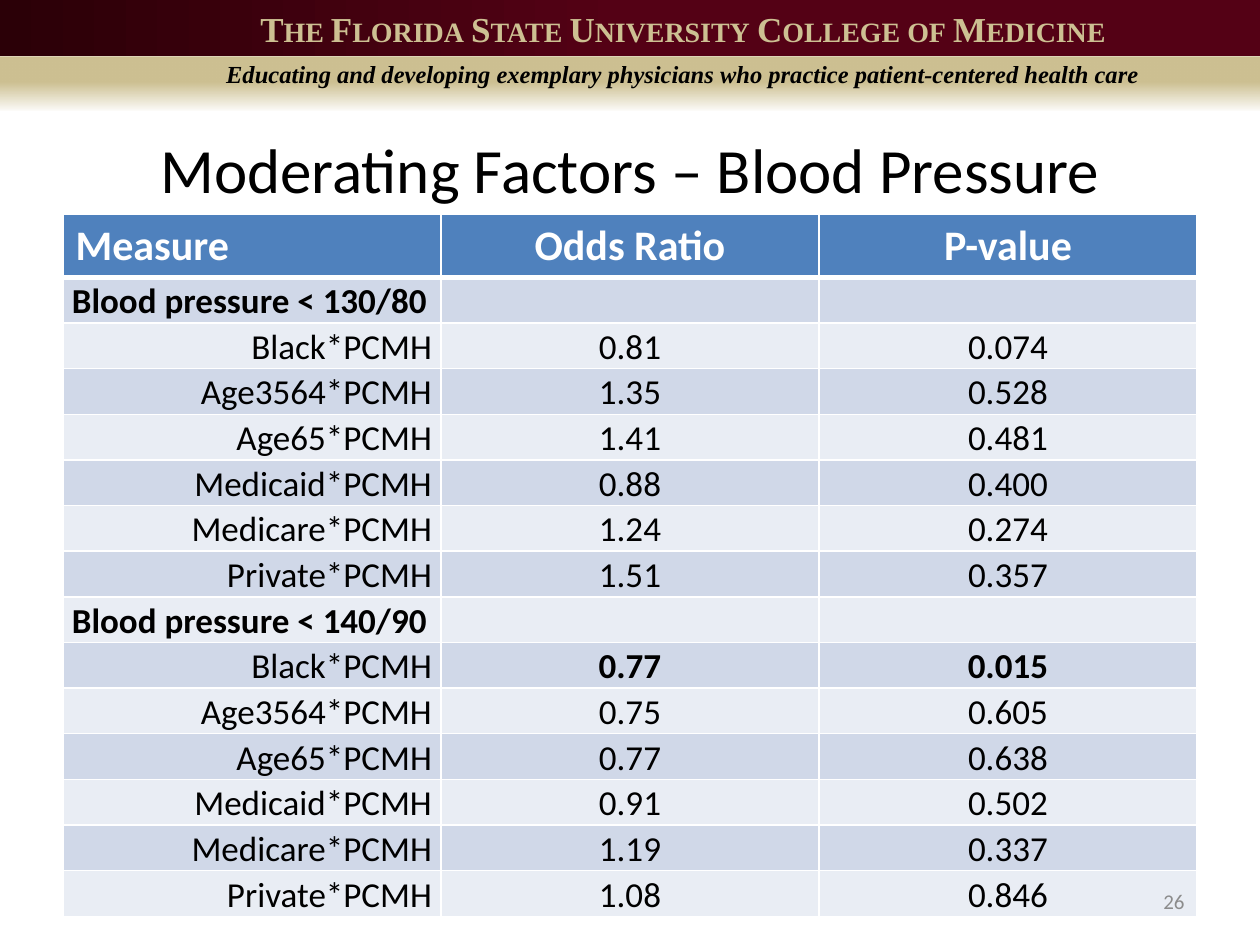
import pptx
import pptx.util
import pptx.dml.color
import pptx.enum.shapes
import pptx.enum.text
import pptx.oxml
import pptx.oxml.ns
import lxml.etree

Cm = pptx.util.Cm
Pt = pptx.util.Pt
ALIGN = pptx.enum.text.PP_ALIGN
ANCHOR = pptx.enum.text.MSO_ANCHOR

TITLE = "Moderating Factors – Blood Pressure"
COLLEGE = "The Florida State University College of Medicine"
MISSION = "Educating and developing exemplary physicians who practice patient-centered health care"
PAGE_NUMBER = "26"
HEADINGS = ("Measure", "Odds Ratio", "P-value")
FACTORS = ("Black", "Age3564", "Age65", "Medicaid", "Medicare", "Private")
GROUPS = [
    ("Blood pressure < 130/80",
     [("0.81", "0.074"), ("1.35", "0.528"), ("1.41", "0.481"),
      ("0.88", "0.400"), ("1.24", "0.274"), ("1.51", "0.357")]),
    ("Blood pressure < 140/90",
     [("0.77", "0.015"), ("0.75", "0.605"), ("0.77", "0.638"),
      ("0.91", "0.502"), ("1.19", "0.337"), ("1.08", "0.846")]),
]
SIGNIFICANCE = 0.05

COLORS = {
    "garnet": "540115", "dark garnet": "2B0007", "gold": "CDC092",
    "header": "4F81BD", "odd band": "D0D8E8", "even band": "E9EDF4",
    "white": "FFFFFF", "black": "000000", "gray": "8C8C8C",
}
FORMATS = {
    "college": {"name": "Times New Roman", "size": Pt(20), "bold": True, "color": "gold"},
    "mission": {"name": "Times New Roman", "size": Pt(14), "bold": True, "italic": True, "color": "black"},
    "title": {"name": "Calibri", "size": Pt(36), "color": "black"},
    "heading": {"name": "Calibri", "size": Pt(24), "bold": True, "color": "white"},
    "strong": {"name": "Calibri", "size": Pt(20), "bold": True, "color": "black"},
    "plain": {"name": "Calibri", "size": Pt(20), "bold": False, "color": "black"},
    "number": {"name": "Calibri", "size": Pt(12), "color": "gray"},
}
CELL_MARGINS = {"margin_left": Cm(0.18), "margin_right": Cm(0.18), "margin_top": 0, "margin_bottom": 0}
HEADER_HEIGHT = Cm(1.27)
ROW_HEIGHT = Cm(0.92)


def rgb(color):
    return pptx.dml.color.RGBColor.from_string(COLORS[color])


def write(text_frame, text, style, alignment):
    paragraph = text_frame.paragraphs[0]
    paragraph.alignment = alignment
    run = paragraph.add_run()
    run.text = text
    for attribute, value in FORMATS[style].items():
        if attribute == "color":
            run.font.color.rgb = rgb(value)
        else:
            setattr(run.font, attribute, value)
    return run


def add_text(slide, box, text, style, alignment, anchor=ANCHOR.TOP):
    text_frame = slide.shapes.add_textbox(*map(Cm, box)).text_frame
    text_frame.word_wrap = True
    text_frame.vertical_anchor = anchor
    return write(text_frame, text, style, alignment)


def add_band(slide, box, angle, stops):
    band = slide.shapes.add_shape(pptx.enum.shapes.MSO_SHAPE.RECTANGLE, *map(Cm, box))
    band.shadow.inherit = False
    band.line.fill.background()
    entries = "".join(
        f'<a:gs pos="{position * 1000}"><a:srgbClr val="{COLORS[color]}">'
        f'<a:alpha val="{opacity * 1000}"/></a:srgbClr></a:gs>'
        for position, color, opacity in stops)
    gradient = pptx.oxml.parse_xml(
        f'<a:gradFill {pptx.oxml.ns.nsdecls("a")} rotWithShape="1"><a:gsLst>{entries}</a:gsLst>'
        f'<a:lin ang="{angle * 60000}" scaled="0"/></a:gradFill>')
    band.fill.solid()
    solid = band.element.spPr.find(pptx.oxml.ns.qn("a:solidFill"))
    band.element.spPr.replace(solid, gradient)


def format_cell(cell, fill, bottom_width):
    properties = cell._tc.get_or_add_tcPr()
    for side, width in (("L", 1), ("R", 1), ("T", 1), ("B", bottom_width)):
        properties.append(pptx.oxml.parse_xml(
            f'<a:ln{side} {pptx.oxml.ns.nsdecls("a")} w="{Pt(width)}"><a:solidFill>'
            f'<a:srgbClr val="{COLORS["white"]}"/></a:solidFill></a:ln{side}>'))
    cell.fill.solid()
    cell.fill.fore_color.rgb = rgb(fill)


def table_rows():
    rows = [[(heading, "heading", ALIGN.CENTER if column else ALIGN.LEFT)
             for column, heading in enumerate(HEADINGS)]]
    for name, results in GROUPS:
        rows.append([(name, "strong", ALIGN.LEFT), None, None])
        for factor, values in zip(FACTORS, results):
            style = "strong" if float(values[1]) < SIGNIFICANCE else "plain"
            rows.append([(f"{factor}*PCMH", "plain", ALIGN.RIGHT)]
                        + [(value, style, ALIGN.CENTER) for value in values])
    return rows


def add_results(slide):
    rows = table_rows()
    height = HEADER_HEIGHT + ROW_HEIGHT * (len(rows) - 1)
    table = slide.shapes.add_table(
        len(rows), len(HEADINGS), Cm(1.27), Cm(4.32), Cm(22.86), height).table
    for row_index, row in enumerate(rows):
        is_header = row_index == 0
        table.rows[row_index].height = HEADER_HEIGHT if is_header else ROW_HEIGHT
        fill = "header" if is_header else "odd band" if row_index % 2 else "even band"
        for column_index, content in enumerate(row):
            cell = table.cell(row_index, column_index)
            format_cell(cell, fill, 3 if is_header else 1)
            if not is_header:
                for attribute, value in CELL_MARGINS.items():
                    setattr(cell, attribute, value)
                cell.text_frame.paragraphs[0].line_spacing = 1.07
            if content:
                write(cell.text_frame, *content)


def main():
    presentation = pptx.Presentation()
    presentation.slide_width = Cm(25.4)
    presentation.slide_height = Cm(19.05)
    slide = presentation.slides.add_slide(presentation.slide_layouts[5])

    add_band(slide, (0, 1.14, 25.4, 1.09), 90, [(47, "gold", 100), (100, "gold", 5)])
    add_band(slide, (0, 0, 25.4, 1.14), 180, [(50, "garnet", 100), (100, "dark garnet", 100)])
    college = add_text(slide, (1.07, 0.03, 25.4, 1.12), COLLEGE, "college", ALIGN.CENTER)
    college.font._element.set("cap", "small")
    add_text(slide, (1.07, 1.07, 25.4, 0.84), MISSION, "mission", ALIGN.CENTER)

    title = slide.shapes.title
    title.left, title.top, title.width, title.height = map(Cm, (1.27, 2.54, 22.86, 1.7))
    title.text_frame.auto_size = pptx.enum.text.MSO_AUTO_SIZE.NONE
    title.text_frame.vertical_anchor = ANCHOR.MIDDLE
    write(title.text_frame, TITLE, "title", ALIGN.CENTER)

    add_results(slide)
    add_text(slide, (18.21, 17.65, 5.92, 1.02), PAGE_NUMBER, "number", ALIGN.RIGHT, ANCHOR.MIDDLE)
    presentation.save("out.pptx")


if __name__ == "__main__":
    main()
